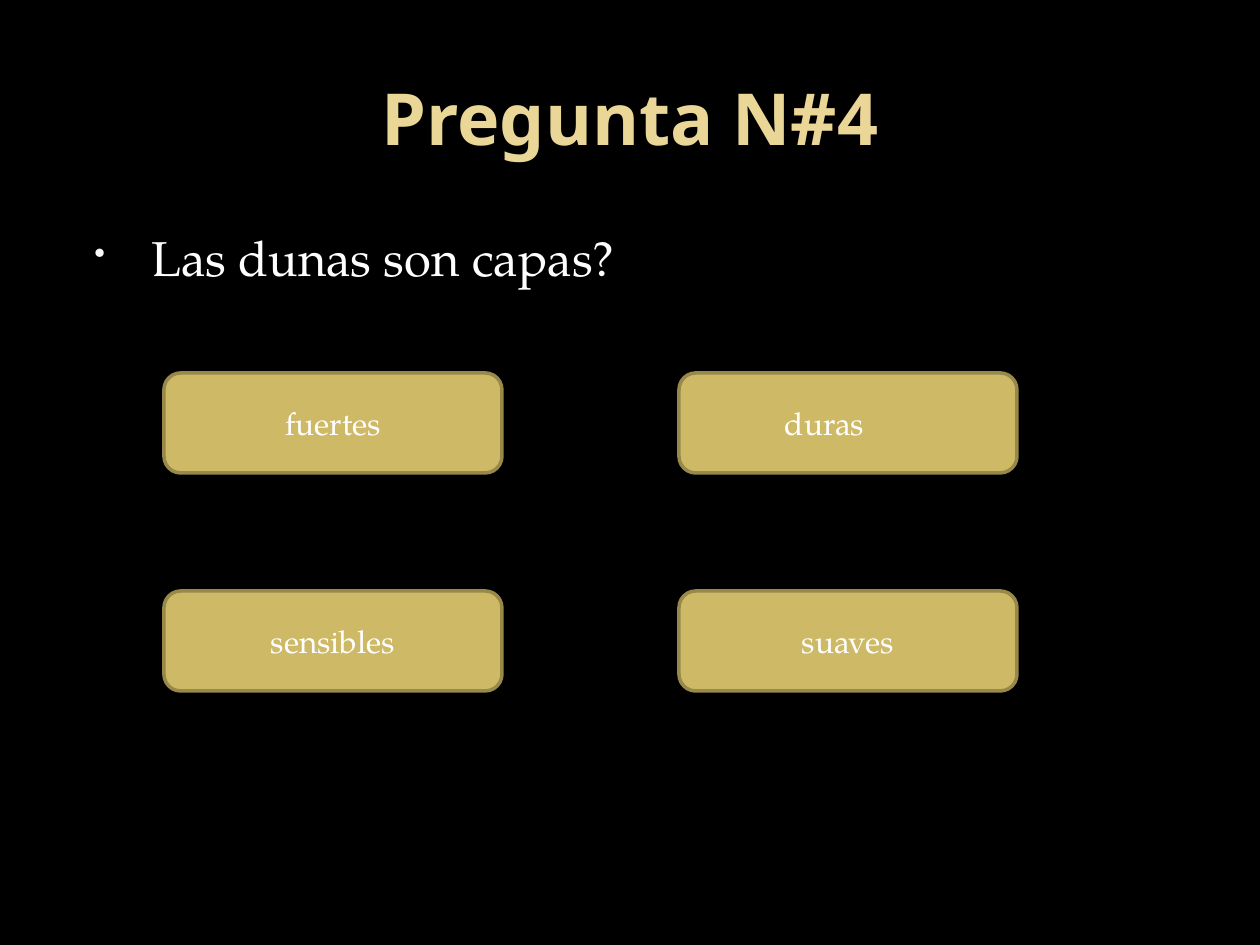
"""Build a quiz slide with one question and four answer buttons."""
from typing import NamedTuple

from lxml import etree
from pptx import Presentation
from pptx.dml.color import RGBColor
from pptx.enum.shapes import MSO_SHAPE
from pptx.enum.text import MSO_ANCHOR, MSO_AUTO_SIZE, PP_ALIGN
from pptx.oxml.ns import qn
from pptx.util import Emu, Pt

ROUNDED = MSO_SHAPE.ROUNDED_RECTANGLE
MIDDLE = MSO_ANCHOR.MIDDLE
CENTER = PP_ALIGN.CENTER
NO_AUTOFIT = MSO_AUTO_SIZE.NONE

PX_PER_INCH = 126
COLORS = {
    "background": "000000",
    "title": "EAD696",
    "text": "FFFFFF",
    "bullet": "F9F9F9",
    "button": "CEB966",
    "border": "98894B",
}
HEADING_FONT = "Noto Sans"
BODY_FONT = "TeX Gyre Pagella"

BUTTON_LEFT, BUTTON_TOP = 164, 373
BUTTON_WIDTH, BUTTON_HEIGHT = 338, 100
COLUMN_STEP, ROW_STEP = 515, 218


class Answer(NamedTuple):
    text: str
    column: int
    row: int


ANSWERS = [
    Answer("fuertes", 0, 0),
    Answer("duras\t", 1, 0),
    Answer("sensibles", 0, 1),
    Answer("suaves", 1, 1),
]


def px(n: int) -> Emu:
    """Convert pixels to EMU."""
    return Emu(round(n * 914400 / PX_PER_INCH))


def rgb(name: str) -> RGBColor:
    """Look up a named colour."""
    return RGBColor.from_string(COLORS[name])


def style(p, font: str, size: int, color: str) -> None:
    """Set the font of a paragraph."""
    p.font.name = font
    p.font.size = Pt(size)
    p.font.color.rgb = rgb(color)


def add_bullet(p) -> None:
    """Give a paragraph a small bullet with a hanging indent."""
    pPr = p._p.get_or_add_pPr()
    pPr.set("marL", str(px(76)))
    pPr.set("indent", str(-px(57)))
    color = etree.Element(qn("a:buClr"))
    etree.SubElement(color, qn("a:srgbClr"), val=COLORS["bullet"])
    size = etree.Element(qn("a:buSzPct"), val="65000")
    char = etree.Element(qn("a:buChar"), char="•")
    for i, element in enumerate((color, size, char)):
        pPr.insert(i, element)


def add_title(slide, text: str) -> None:
    """Fill and format the title placeholder."""
    sp = slide.shapes.title
    sp.left, sp.top, sp.width, sp.height = px(63), px(38), px(1134), px(157)
    tf = sp.text_frame
    tf.auto_size = NO_AUTOFIT
    tf.vertical_anchor = MIDDLE
    p = tf.paragraphs[0]
    p.text = text
    p.alignment = CENTER
    style(p, HEADING_FONT, 41, "title")
    p.font.bold = True


def add_question(slide, text: str) -> None:
    """Add the bulleted question."""
    sp = slide.shapes.add_textbox(px(63), px(221), px(1134), px(649))
    tf = sp.text_frame
    tf.word_wrap = True
    p = tf.paragraphs[0]
    p.text = text
    style(p, BODY_FONT, 28, "text")
    add_bullet(p)
    p.space_before = Pt(5.6)


def add_button(slide, answer: Answer) -> None:
    """Add an answer button at its place in the grid."""
    sp = slide.shapes.add_shape(
        ROUNDED,
        px(BUTTON_LEFT + answer.column * COLUMN_STEP),
        px(BUTTON_TOP + answer.row * ROW_STEP),
        px(BUTTON_WIDTH),
        px(BUTTON_HEIGHT),
    )
    sp.shadow.inherit = False
    sp.fill.solid()
    sp.fill.fore_color.rgb = rgb("button")
    sp.line.color.rgb = rgb("border")
    sp.line.width = Pt(2)
    tf = sp.text_frame
    tf.vertical_anchor = MIDDLE
    p = tf.paragraphs[0]
    p.text = answer.text
    p.alignment = CENTER
    style(p, BODY_FONT, 18, "text")


def main() -> None:
    """Build and save the slide."""
    prs = Presentation()
    prs.slide_width, prs.slide_height = px(1260), px(945)
    slide = prs.slides.add_slide(prs.slide_layouts.get_by_name("Title Only"))
    slide.background.fill.solid()
    slide.background.fill.fore_color.rgb = rgb("background")
    add_title(slide, "Pregunta N#4")
    add_question(slide, "Las dunas son capas?")
    for answer in ANSWERS:
        add_button(slide, answer)
    prs.save("out.pptx")


if __name__ == "__main__":
    main()
